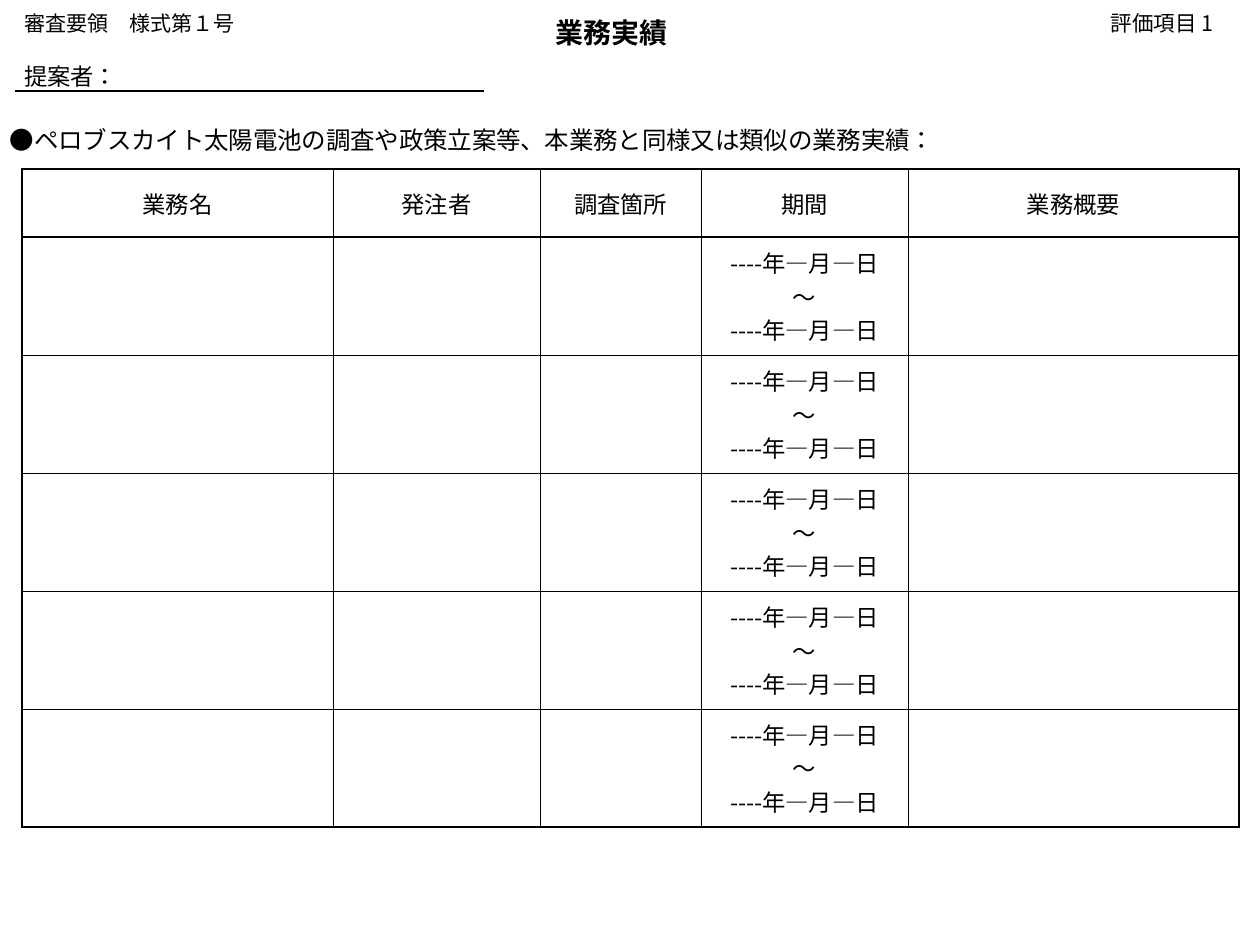
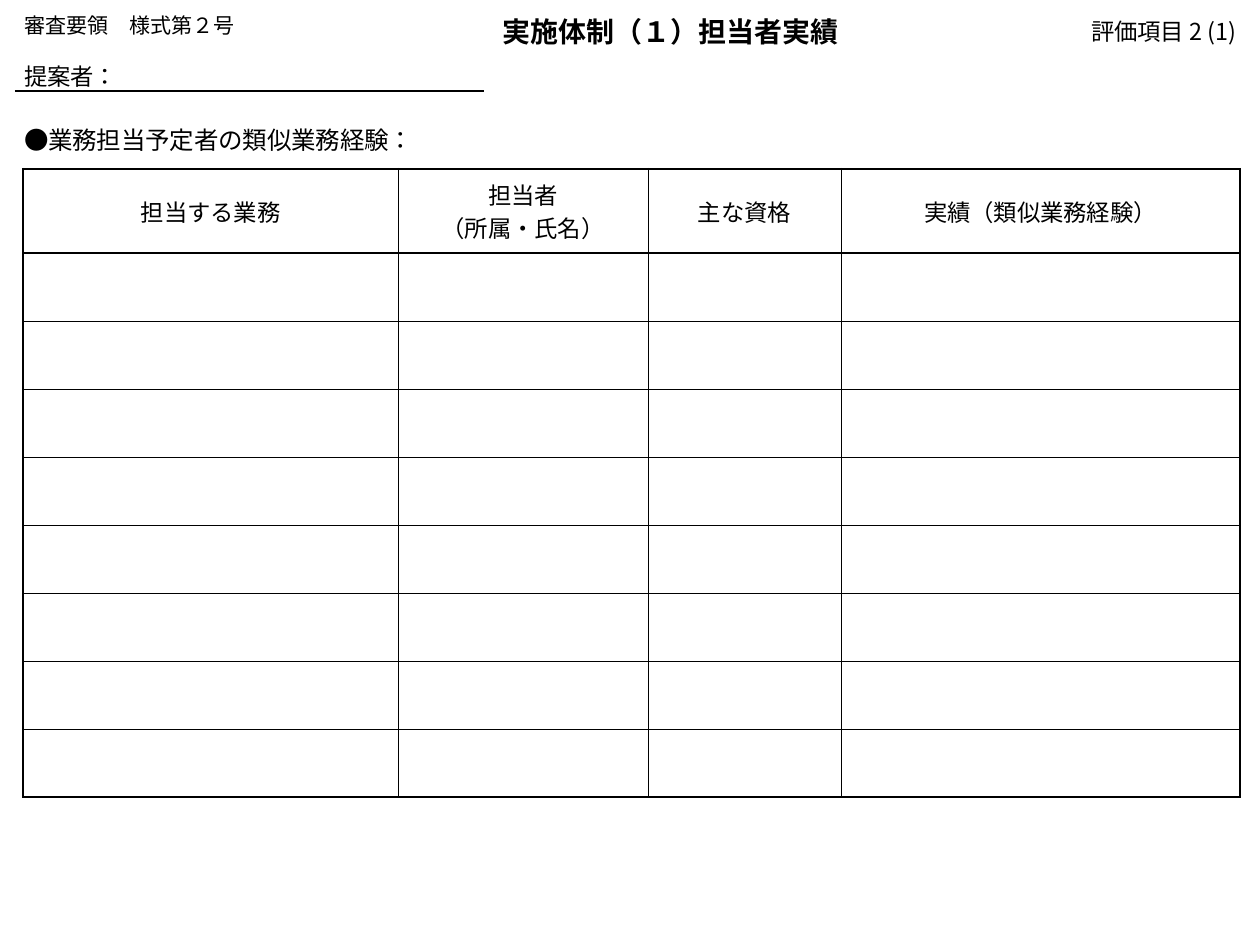
from dataclasses import dataclass
from lxml.etree import SubElement
from pptx import Presentation
from pptx.dml.color import RGBColor
from pptx.enum.lang import MSO_LANGUAGE_ID
from pptx.enum.shapes import MSO_CONNECTOR
from pptx.enum.text import MSO_ANCHOR, PP_ALIGN
from pptx.oxml.ns import qn
from pptx.util import Emu, Pt


@dataclass(frozen=True)
class Theme:
    font: str = "Noto Sans CJK JP"
    ink: RGBColor = RGBColor(0, 0, 0)
    title: float = 12
    lead: float = 10.5
    body: float = 10
    form: float = 9
    thick: float = 1
    rule: float = 0.5
    thin: float = 0.25


T = Theme()
PX = 914400 / 168


def style(para, size, align=PP_ALIGN.LEFT, bold=False):
    para.alignment = align
    font = para.font
    font.size, font.bold, font.name = Pt(size), bold, T.font
    font.language_id = MSO_LANGUAGE_ID.JAPANESE
    font.color.rgb = T.ink
    SubElement(para._p.pPr.find(qn("a:defRPr")), qn("a:ea"), typeface=T.font)


def label(slide, text, box, size, space=0.9, before=10, anchor=MSO_ANCHOR.MIDDLE,
          align=PP_ALIGN.LEFT, bold=False):
    frame = slide.shapes.add_textbox(*(Emu(round(n * PX)) for n in box)).text_frame
    frame.word_wrap = True
    frame.vertical_anchor = anchor
    frame.margin_left = frame.margin_right = Emu(round(10 * PX))
    frame.margin_top = frame.margin_bottom = Emu(round(5 * PX))
    frame.text = text
    para = frame.paragraphs[0]
    para.line_spacing, para.space_before = space, Pt(before)
    style(para, size, align, bold)


# Content of the forms
dates = "----年—月—日\n～\n----年—月—日"
forms = [
    dict(
        title=("業務実績", (469, 8, 285, 53)),
        form=("審査要領　様式第１号", (14, 5, 299, 39)),
        item=("評価項目 1", (1067, 6, 190, 39), 9.2, 0.8),
        lead=("●ペロブスカイト太陽電池の調査や政策立案等、本業務と同様又は類似の業務実績：",
              (0, 117, 1110, 53)),
        left=22, cols=(311, 207, 161, 207, 331), head=68, row=118,
        rows=[("業務名", "発注者", "調査箇所", "期間", "業務概要")]
        + [("", "", "", dates, "")] * 5,
    ),
    dict(
        title=("実施体制（１）担当者実績", (484, 6, 373, 55)),
        form=("審査要領　様式第２号", (14, 0, 299, 53)),
        item=("評価項目 2 (1)", (1067, 5, 193, 55), T.body, 0.9),
        lead=("●業務担当予定者の類似業務経験：", (14, 117, 442, 53)),
        left=23, cols=(375, 250, 193, 399), head=84, row=68,
        rows=[("担当する業務", "担当者\n（所属・氏名）", "主な資格", "実績（類似業務経験）")]
        + [("",) * 4] * 8,
    ),
]

deck = Presentation()
deck.slide_width, deck.slide_height = Emu(round(1260 * PX)), Emu(round(945 * PX))

for form in forms:
    slide = deck.slides.add_slide(deck.slide_layouts[6])

    # Heading
    label(slide, *form["title"], T.title, before=7.5, align=PP_ALIGN.CENTER, bold=True)
    label(slide, *form["lead"], T.lead, space=1.1, anchor=MSO_ANCHOR.TOP)
    label(slide, *form["form"], T.form)
    label(slide, *form["item"], before=7.5, align=PP_ALIGN.CENTER)

    # Proposer line
    label(slide, "提案者：", (14, 51, 482, 53), T.body)
    ends = (Emu(round(n * PX)) for n in (15, 91, 484, 91))
    line = slide.shapes.add_connector(MSO_CONNECTOR.STRAIGHT, *ends)
    line.line.color.rgb, line.line.width = T.ink, Pt(T.rule)
    SubElement(line._element.spPr, qn("a:effectLst"))

    # Table
    cols, rows = form["cols"], form["rows"]
    highs = [form["head"]] + [form["row"]] * (len(rows) - 1)
    box = (form["left"], 169, sum(cols), sum(highs))
    table = slide.shapes.add_table(
        len(rows), len(cols), *(Emu(round(n * PX)) for n in box)).table
    table.first_row = table.horz_banding = False
    for col, width in zip(table.columns, cols):
        col.width = Emu(round(width * PX))
    for r, texts in enumerate(rows):
        table.rows[r].height = Emu(round(highs[r] * PX))
        for c, text in enumerate(texts):
            cell = table.cell(r, c)
            cell.text = text
            cell.vertical_anchor = MSO_ANCHOR.MIDDLE
            for para in cell.text_frame.paragraphs:
                style(para, T.body, PP_ALIGN.CENTER)
                if not text:
                    SubElement(para._p, qn("a:endParaRPr"), sz=str(int(T.body * 100)))
            # Heavy frame and header rule, fine lines inside
            heavy = dict(lnL=c == 0, lnR=c == len(cols) - 1,
                         lnT=r < 2, lnB=r in (0, len(rows) - 1))
            props = cell._tc.get_or_add_tcPr()
            for side, bold in heavy.items():
                width = Pt(T.thick if bold else T.thin)
                edge = SubElement(props, qn("a:" + side), w=str(width))
                fill = SubElement(edge, qn("a:solidFill"))
                SubElement(fill, qn("a:srgbClr"), val=str(T.ink))
            cell.fill.background()

deck.save("out.pptx")
